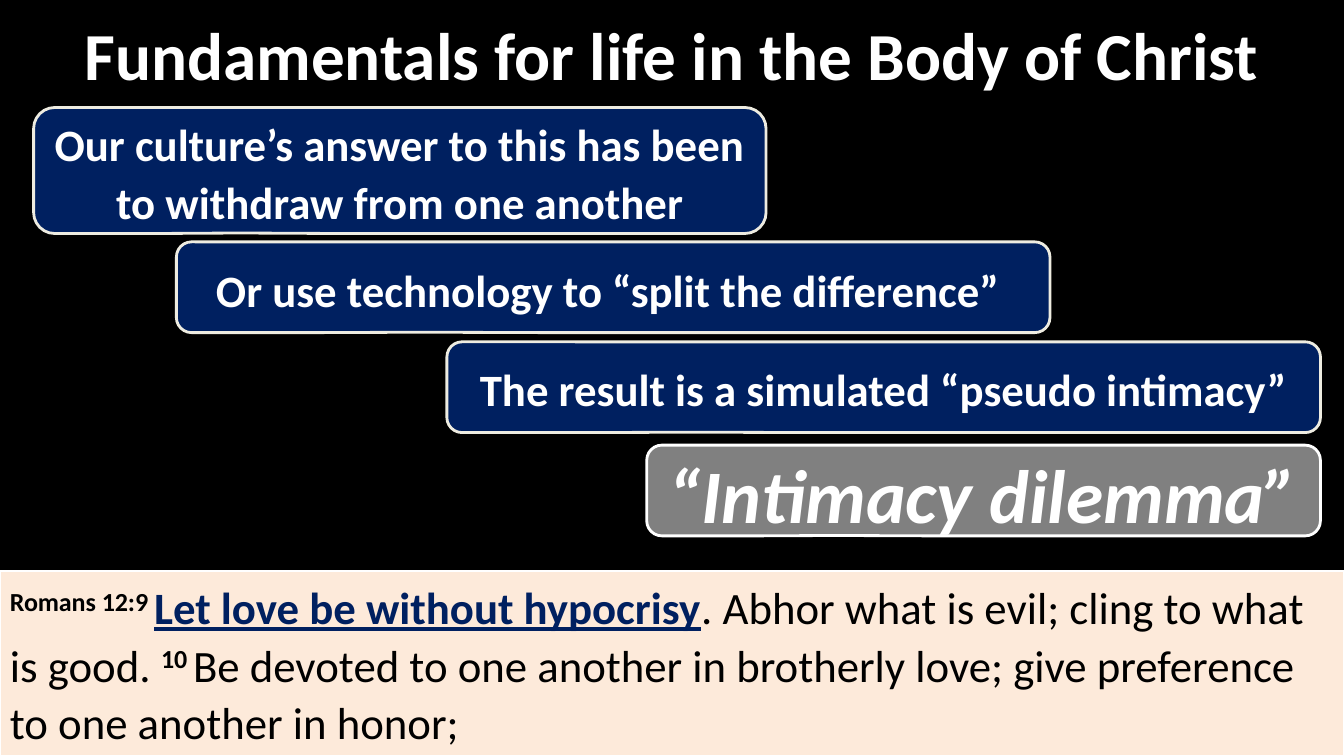
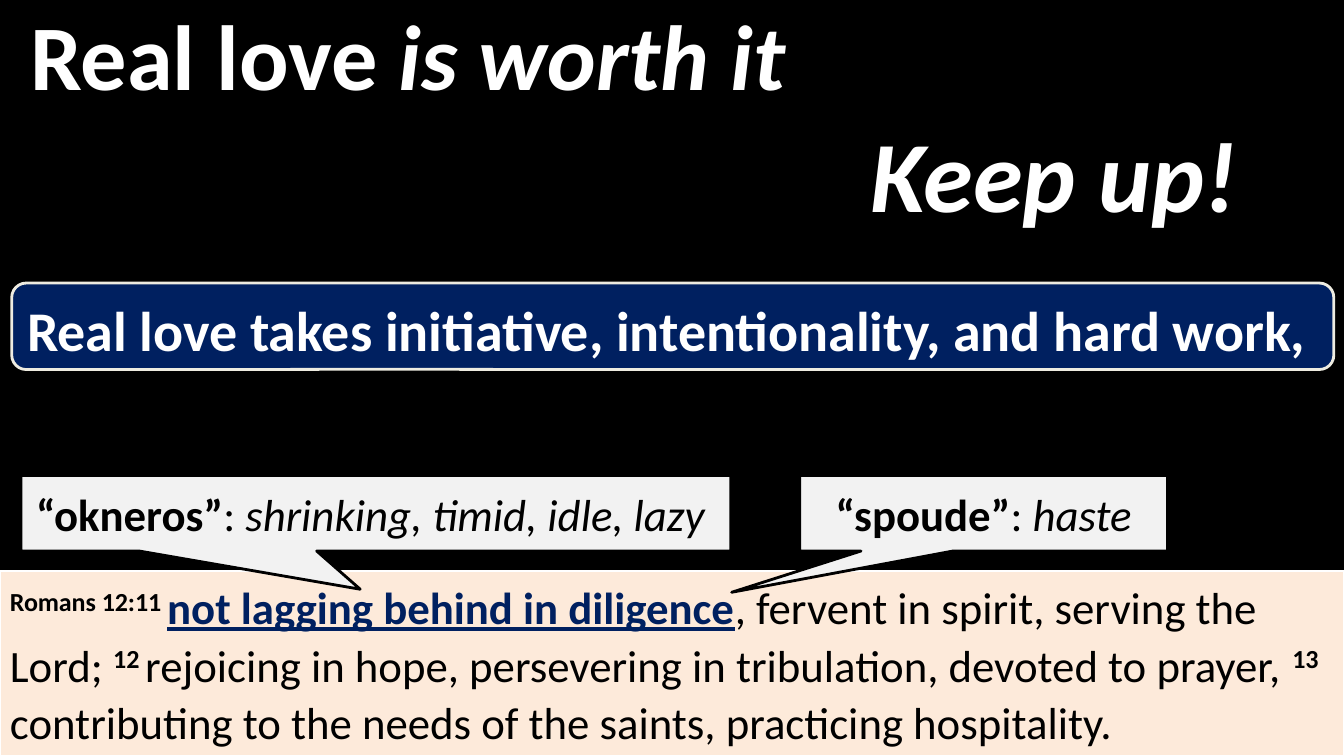
from dataclasses import dataclass

from pptx import Presentation
from pptx import util as u
from pptx.dml.color import RGBColor
from pptx.enum import shapes, text

# Grid: 160 columns by 90 rows, one twelfth of an inch each
COLUMNS, ROWS = 160, 90
CELL = u.Inches(1) // 12
TITLE_ROWS = 12.8
VERSE_ROW = 68

FONT = "Calibri"
COLORS = {
    "black": "000000",
    "white": "FFFFFF",
    "navy": "002060",
    "cream": "EEECE1",
    "gray": "808080",
    "pale": "F2F2F2",
    "peach": "FDEADA",
}
ROUNDED = shapes.MSO_SHAPE.ROUNDED_RECTANGULAR_CALLOUT
POINTED = shapes.MSO_SHAPE.RECTANGULAR_CALLOUT


@dataclass(frozen=True)
class Box:
    column: float
    row: float
    columns: float
    rows: float

    def lengths(self) -> list[int]:
        return [round(n * CELL) for n in (self.column, self.row, self.columns, self.rows)]


@dataclass(frozen=True)
class Run:
    text: str
    bold: bool | None = None
    italic: bool | None = None
    color: str | None = None
    underline: bool | None = None
    raised: bool = False


@dataclass(frozen=True)
class Style:
    size: int
    fill: str | None = "navy"
    line: str | None = "cream"
    line_width: float = 2
    color: str = "white"
    bold: bool = True
    italic: bool = False
    spacing: float = 1.07
    align: text.PP_ALIGN = text.PP_ALIGN.CENTER
    anchor: text.MSO_ANCHOR = text.MSO_ANCHOR.MIDDLE


@dataclass(frozen=True)
class Callout:
    box: Box
    runs: list[Run]
    style: Style
    kind: shapes.MSO_SHAPE = ROUNDED
    tail: tuple[float, ...] = (-0.219, 0.496, 0.167)


POINT = Style(32)
DILEMMA = Style(54, fill="gray", line="white", italic=True)
APPEAL = Style(72, fill=None, line=None, italic=True)
SUMMARY = Style(40)
WORD = Style(32, fill="pale", line="black", color="black", bold=False, spacing=1)
VERSE = Style(32, fill="peach", line="white", line_width=1.5, color="black", bold=False,
              align=text.PP_ALIGN.LEFT, anchor=text.MSO_ANCHOR.TOP)


def color(name: str) -> RGBColor:
    return RGBColor.from_string(COLORS[name])


def number(label: str) -> Run:
    """A raised verse number, tied to the next word by a no-break space."""
    return Run(label + " ", bold=True, raised=True)


def key_phrase(words: str) -> Run:
    return Run(words, bold=True, color="navy", underline=True)


def word_study(word: str, meaning: str) -> list[Run]:
    return [Run(f"“{word}”", bold=True), Run(": "), Run(meaning, italic=True)]


def write(shape, runs: list[Run], style: Style) -> None:
    frame = shape.text_frame
    frame.word_wrap = True
    frame.auto_size = text.MSO_AUTO_SIZE.NONE
    frame.vertical_anchor = style.anchor
    paragraph = frame.paragraphs[0]
    paragraph.alignment = style.align
    paragraph.line_spacing = style.spacing
    font = paragraph.font
    font.name, font.size = FONT, u.Pt(style.size)
    font.bold, font.italic = style.bold, style.italic
    font.color.rgb = color(style.color)
    for item in runs:
        run = paragraph.add_run()
        run.text = item.text
        run.font.bold, run.font.italic = item.bold, item.italic
        run.font.underline = item.underline
        if item.color:
            run.font.color.rgb = color(item.color)
        if item.raised:
            run._r.get_or_add_rPr().set("baseline", "30000")


def add_panel(slide, kind: shapes.MSO_SHAPE, box: Box, runs: list[Run], style: Style):
    shape = slide.shapes.add_shape(kind, *box.lengths())
    shape.shadow.inherit = False
    if style.fill:
        shape.fill.solid()
        shape.fill.fore_color.rgb = color(style.fill)
    else:
        shape.fill.background()
    if style.line:
        shape.line.color.rgb = color(style.line)
        shape.line.width = u.Pt(style.line_width)
    else:
        shape.line.fill.background()
    write(shape, runs, style)
    return shape


def add_slide(presentation, title: list[Run], title_style: Style, verse: list[Run],
              callouts: list[Callout]) -> None:
    slide = presentation.slides.add_slide(presentation.slide_layouts[5])

    # Title band
    heading = slide.shapes.title
    band = Box(0, 0, COLUMNS, TITLE_ROWS)
    heading.left, heading.top, heading.width, heading.height = band.lengths()
    write(heading, title, title_style)
    if title_style.align == text.PP_ALIGN.LEFT:
        heading.text_frame.margin_left = u.Inches(0.3)

    # Scripture band
    add_panel(slide, shapes.MSO_SHAPE.RECTANGLE,
              Box(0, VERSE_ROW, COLUMNS, ROWS - VERSE_ROW), verse, VERSE)

    # Callouts
    for callout in callouts:
        shape = add_panel(slide, callout.kind, callout.box, callout.runs, callout.style)
        for index, value in enumerate(callout.tail):
            shape.adjustments[index] = value


def main() -> None:
    presentation = Presentation()
    presentation.slide_width = COLUMNS * CELL
    presentation.slide_height = ROWS * CELL
    background = presentation.slide_master.background.fill
    background.solid()
    background.fore_color.rgb = color("black")

    # Slide 1: the intimacy dilemma
    add_slide(
        presentation,
        [Run("Fundamentals for life in the Body of Christ")],
        Style(48, spacing=1),
        [
            number("Romans 12:9"),
            key_phrase("Let love be without hypocrisy"),
            Run(". Abhor what is evil; cling to what is good. "),
            number("10"),
            Run("Be devoted to one another in brotherly love; "
                "give preference to one another in honor;"),
        ],
        [
            Callout(Box(4, 12.8, 87.2, 15), [Run(
                "Our culture’s answer to this has been to withdraw from one another")], POINT),
            Callout(Box(21, 28.8, 104, 10.8), [Run(
                "Or use technology to “split the difference” ")], POINT),
            Callout(Box(53.2, 40.7, 104, 10.8), [Run(
                "The result is a simulated “pseudo intimacy”")], POINT),
            Callout(Box(77, 53, 80.2, 10.8), [Run("“Intimacy dilemma” ")], DILEMMA),
        ],
    )

    # Slide 2: keeping up
    add_slide(
        presentation,
        [Run("Real love "), Run("is worth it", italic=True)],
        Style(66, spacing=1, align=text.PP_ALIGN.LEFT),
        [
            number("Romans 12:11"),
            key_phrase("not lagging behind in diligence"),
            Run(", fervent in spirit, serving the Lord; "),
            number("12"),
            Run("rejoicing in hope, persevering in tribulation, devoted to prayer, "),
            number("13"),
            Run("contributing to the needs of the saints, practicing hospitality."),
        ],
        [
            Callout(Box(98, 14.2, 55, 11.5), [Run("Keep up!")], APPEAL),
            Callout(Box(1.4, 33.7, 157.4, 10.3), [Run(
                "Real love takes initiative, intentionality, and hard work, ")], SUMMARY),
            Callout(Box(2.5, 56.6, 84.5, 9),
                    word_study("okneros", "shrinking, timid, idle, lazy "),
                    WORD, POINTED, (-0.022, 1.006)),
            Callout(Box(95.2, 56.6, 43.8, 9), word_study("spoude", "haste"),
                    WORD, POINTED, (-0.685, 1.046)),
        ],
    )
    presentation.save("out.pptx")


if __name__ == "__main__":
    main()
